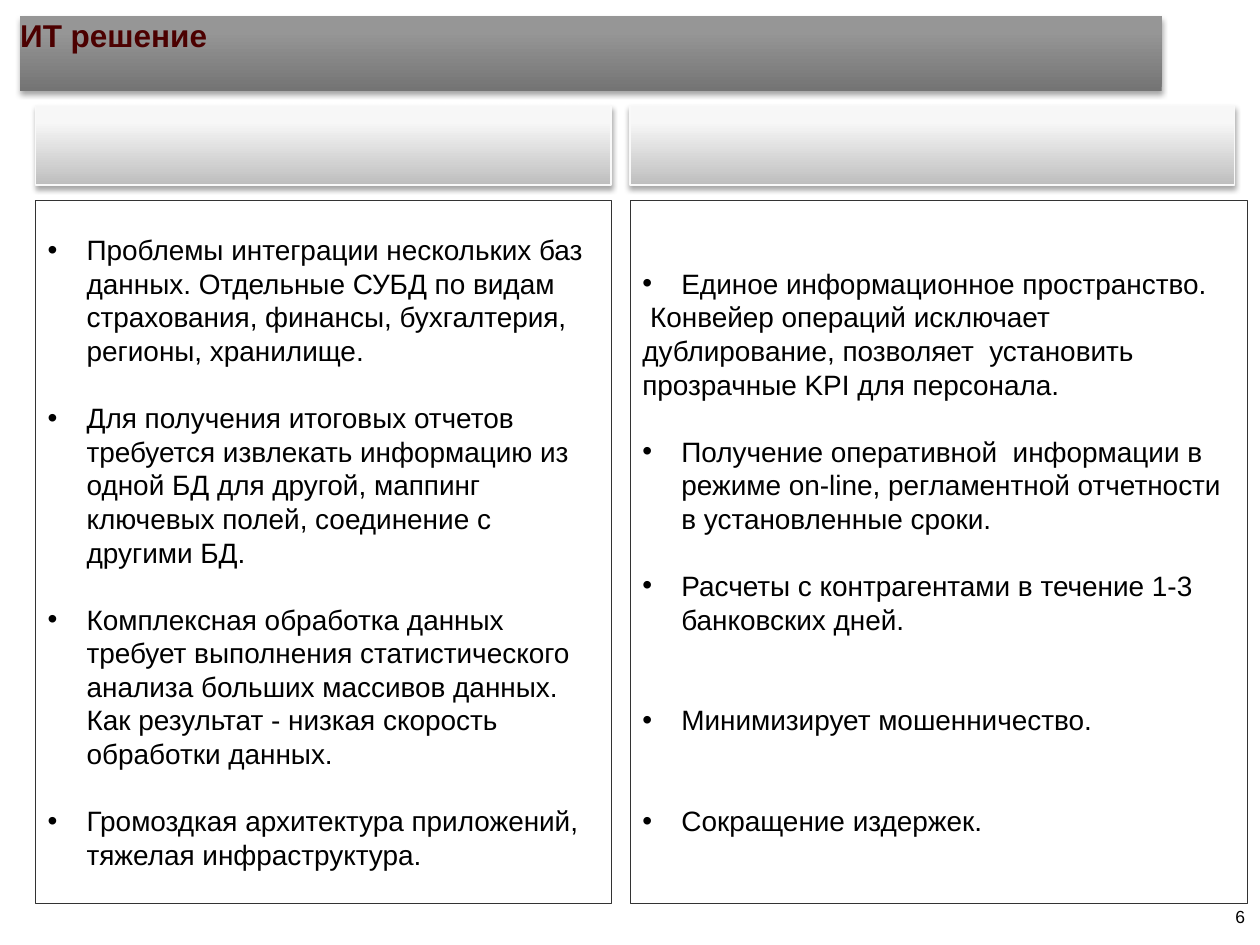
from dataclasses import dataclass

from lxml.etree import SubElement
from pptx import Presentation
from pptx.dml.color import RGBColor
from pptx.enum.shapes import MSO_SHAPE
from pptx.enum.text import MSO_ANCHOR, PP_ALIGN
from pptx.oxml import parse_xml
from pptx.oxml.ns import nsdecls, qn
from pptx.util import Inches, Pt


@dataclass(frozen=True)
class Theme:
    font: str = "Arial"
    title_size: float = 18
    body_size: float = 16
    number_size: float = 10
    line_height: float = 19.2
    title_color: str = "4C0000"
    text_color: str = "000000"
    panel_fill: str = "FFFFFF"
    panel_line: str = "333333"
    header_line: str = "F9F9F9"
    title_gradient: tuple = ((0, "747474"), (80, "969696"), (100, "979797"))
    header_gradient: tuple = ((0, "BEBEBE"), (80, "F7F7F7"), (100, "F8F8F8"))


THEME = Theme()
HEADER_TOP, HEADER_HEIGHT = 0.84, 0.63
PANEL_TOP, PANEL_HEIGHT = 1.59, 5.58

# Each paragraph: (text, has a bullet, empty lines above it)
PROBLEMS = [
    ("Проблемы интеграции нескольких баз данных. Отдельные СУБД по видам "
     "страхования, финансы, бухгалтерия, регионы, хранилище.", True, 0),
    ("Для получения итоговых отчетов требуется извлекать информацию из одной БД "
     "для другой, маппинг ключевых полей, соединение с другими БД.", True, 1),
    ("Комплексная обработка данных требует выполнения статистического анализа "
     "больших массивов данных. Как результат - низкая скорость обработки данных.",
     True, 1),
    ("Громоздкая архитектура приложений, тяжелая инфраструктура.", True, 1),
]
BENEFITS = [
    ("Единое информационное пространство.", True, 0),
    (" Конвейер операций исключает  дублирование, позволяет  установить "
     "прозрачные KPI для персонала.", False, 0),
    ("Получение оперативной  информации в режиме on-line, регламентной "
     "отчетности в установленные сроки.", True, 1),
    ("Расчеты с контрагентами в течение 1-3 банковских дней.", True, 1),
    ("Минимизирует мошенничество.", True, 2),
    ("Сокращение издержек.", True, 2),
]
# Each column: (left, header width, panel width, paragraphs)
COLUMNS = [(0.28, 4.57, 4.57, PROBLEMS), (5, 4.8, 4.9, BENEFITS)]


def place(shape, left, top, width, height):
    shape.left, shape.top = Inches(left), Inches(top)
    shape.width, shape.height = Inches(width), Inches(height)


def add_run(paragraph, text, size, color, bold=False):
    run = paragraph.add_run()
    run.text = text
    run.font.name = THEME.font
    run.font.size = Pt(size)
    run.font.bold = bold
    run.font.color.rgb = RGBColor.from_string(color)


def clear_margins(frame):
    frame.margin_left = frame.margin_right = 0
    frame.margin_top = frame.margin_bottom = 0


def set_line(shape, color, width):
    shape.line.color.rgb = RGBColor.from_string(color)
    shape.line.width = Pt(width)


def add_raised_look(shape, gradient):
    """Fill with a bottom-to-top gradient and cast a soft shadow downwards."""
    stops = "".join(
        f'<a:gs pos="{position * 1000}"><a:srgbClr val="{color}"/></a:gs>'
        for position, color in gradient)
    fill = parse_xml(
        f'<a:gradFill {nsdecls("a")} rotWithShape="1"><a:gsLst>{stops}</a:gsLst>'
        '<a:lin ang="16200000" scaled="0"/></a:gradFill>')
    shadow = parse_xml(
        f'<a:effectLst {nsdecls("a")}><a:outerShdw blurRad="{Pt(3.1)}" '
        f'dist="{Pt(1.8)}" dir="5400000" rotWithShape="0"><a:srgbClr val="000000">'
        '<a:alpha val="35000"/></a:srgbClr></a:outerShdw></a:effectLst>')
    properties = shape._element.spPr
    geometry = properties.find(qn("a:prstGeom"))
    if geometry is None:
        geometry = parse_xml(f'<a:prstGeom {nsdecls("a")} prst="rect"><a:avLst/></a:prstGeom>')
        properties.append(geometry)
    geometry.addnext(fill)
    properties.append(shadow)


def format_title(title):
    place(title, 0.16, 0.13, 9.06, 0.59)
    add_raised_look(title, THEME.title_gradient)
    frame = title.text_frame
    clear_margins(frame)
    frame.vertical_anchor = MSO_ANCHOR.TOP
    paragraph = frame.paragraphs[0]
    paragraph.alignment = PP_ALIGN.LEFT
    add_run(paragraph, "ИТ решение", THEME.title_size, THEME.title_color, bold=True)


def add_rectangle(slide, left, top, width, height):
    return slide.shapes.add_shape(
        MSO_SHAPE.RECTANGLE, Inches(left), Inches(top), Inches(width), Inches(height))


def add_header(slide, left, width):
    header = add_rectangle(slide, left, HEADER_TOP, width, HEADER_HEIGHT)
    set_line(header, THEME.header_line, 0.75)
    add_raised_look(header, THEME.header_gradient)


def add_bullet(paragraph):
    properties = paragraph._p.get_or_add_pPr()
    properties.set("marL", str(Inches(0.31)))
    properties.set("indent", str(-Inches(0.31)))
    SubElement(properties, qn("a:buFont")).set("typeface", THEME.font)
    SubElement(properties, qn("a:buChar")).set("char", "•")


def add_panel(slide, left, width, items):
    panel = add_rectangle(slide, left, PANEL_TOP, width, PANEL_HEIGHT)
    panel.shadow.inherit = False
    panel.fill.solid()
    panel.fill.fore_color.rgb = RGBColor.from_string(THEME.panel_fill)
    set_line(panel, THEME.panel_line, 0.5)
    frame = panel.text_frame
    frame.word_wrap = True
    frame.vertical_anchor = MSO_ANCHOR.MIDDLE
    for index, (text, bulleted, empty_lines) in enumerate(items):
        paragraph = frame.add_paragraph() if index else frame.paragraphs[0]
        if bulleted:
            add_bullet(paragraph)
        paragraph.alignment = PP_ALIGN.LEFT
        paragraph.line_spacing = Pt(THEME.line_height)
        if empty_lines:
            paragraph.space_before = Pt(empty_lines * THEME.line_height)
        add_run(paragraph, text, THEME.body_size, THEME.text_color)


def add_slide_number(slide, number):
    box = slide.shapes.add_textbox(Inches(9.29), Inches(7.18), Inches(0.59), Inches(0.18))
    frame = box.text_frame
    frame.word_wrap = True
    clear_margins(frame)
    frame.vertical_anchor = MSO_ANCHOR.BOTTOM
    paragraph = frame.paragraphs[0]
    paragraph.alignment = PP_ALIGN.RIGHT
    add_run(paragraph, str(number), THEME.number_size, THEME.text_color)


def main():
    presentation = Presentation()
    presentation.slide_width, presentation.slide_height = Inches(10), Inches(7.5)
    slide = presentation.slides.add_slide(presentation.slide_layouts[5])
    format_title(slide.shapes.title)
    for left, header_width, panel_width, items in COLUMNS:
        add_header(slide, left, header_width)
        add_panel(slide, left, panel_width, items)
    add_slide_number(slide, 6)
    presentation.save("out.pptx")


if __name__ == "__main__":
    main()
